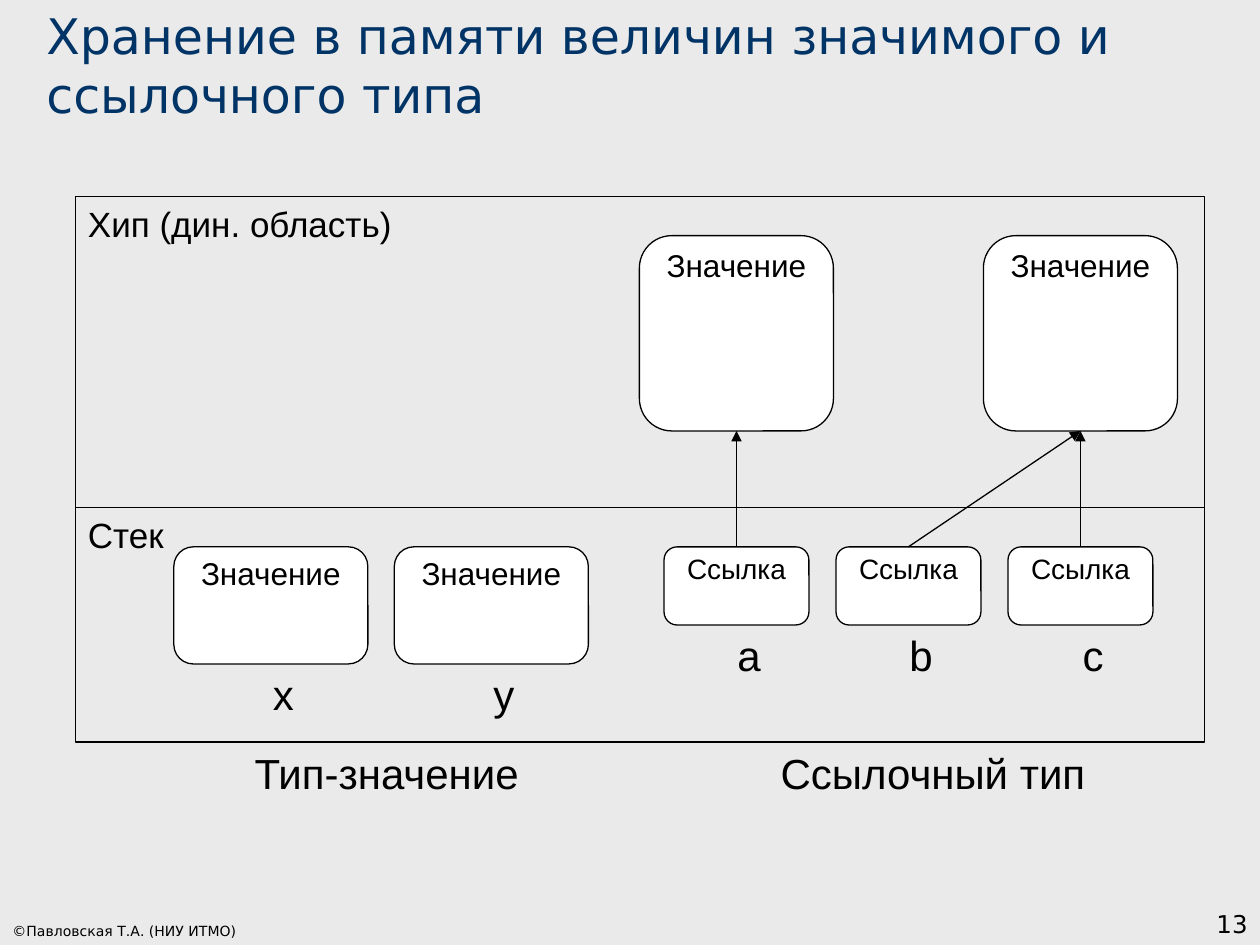
from dataclasses import dataclass

from lxml import etree
from pptx import Presentation
from pptx.dml.color import RGBColor
from pptx.enum.shapes import MSO_CONNECTOR, MSO_SHAPE
from pptx.enum.text import MSO_ANCHOR, PP_ALIGN
from pptx.oxml.ns import qn
from pptx.util import Inches, Pt

RECTANGLE, ROUNDED = MSO_SHAPE.RECTANGLE, MSO_SHAPE.ROUNDED_RECTANGLE
STRAIGHT = MSO_CONNECTOR.STRAIGHT
TOP, BOTTOM = MSO_ANCHOR.TOP, MSO_ANCHOR.BOTTOM
LEFT, CENTER, RIGHT = PP_ALIGN.LEFT, PP_ALIGN.CENTER, PP_ALIGN.RIGHT

COLORS = {"background": "EAEAEA", "title": "003366", "ink": "000000", "box": "FFFFFF"}
DIAGRAM_FONT, FRAME_FONT = "Arial", "DejaVu Sans"
LINE_WIDTH = Pt(0.75)

STACK_TOP, STACK_BOTTOM = 4.03, 5.89
CELL_TOP = 4.34
VALUE_WIDTH, VALUE_HEIGHT = 1.54, 0.93
REFERENCE_WIDTH, REFERENCE_HEIGHT = 1.15, 0.62
REFERENCE_LEFT, REFERENCE_STEP = 5.27, 1.365
HEAP_TOP, HEAP_HEIGHT = 1.87, 1.55
LABEL_WIDTH, LABEL_HEIGHT = 0.57, 0.62
LABEL_SHIFT = 0.1  # labels sit slightly right of the middle of their cell


@dataclass
class Box:
    text: str
    left: float
    top: float
    width: float
    height: float
    size: float


@dataclass
class Reference:
    name: str
    column: int
    target_column: int


def color(name: str) -> RGBColor:
    return RGBColor.from_string(COLORS[name])


def add_text(frame, box: Box, font_name: str, color_name: str, alignment, anchor) -> None:
    frame.word_wrap = True
    frame.vertical_anchor = anchor
    paragraph = frame.paragraphs[0]
    paragraph.alignment = alignment
    run = paragraph.add_run()
    run.text = box.text
    run.font.name = font_name
    run.font.size = Pt(box.size)
    run.font.color.rgb = color(color_name)


def add_frame_text(slide, box: Box, alignment=LEFT, color_name: str = "ink") -> None:
    """Add a text of the slide's frame: title, footer or number."""
    shape = slide.shapes.add_textbox(
        Inches(box.left), Inches(box.top), Inches(box.width), Inches(box.height))
    add_text(shape.text_frame, box, FRAME_FONT, color_name, alignment, BOTTOM)


def add_box(slide, box: Box, kind, filled: bool, outlined: bool):
    shape = slide.shapes.add_shape(
        kind, Inches(box.left), Inches(box.top), Inches(box.width), Inches(box.height))
    shape.shadow.inherit = False
    if filled:
        shape.fill.solid()
        shape.fill.fore_color.rgb = color("box")
    else:
        shape.fill.background()
    if outlined:
        shape.line.color.rgb = color("ink")
        shape.line.width = LINE_WIDTH
    else:
        shape.line.fill.background()
    return shape


def add_area(slide, box: Box) -> None:
    shape = add_box(slide, box, RECTANGLE, filled=False, outlined=True)
    add_text(shape.text_frame, box, DIAGRAM_FONT, "ink", LEFT, TOP)


def add_rounded(slide, box: Box, visible: bool) -> None:
    shape = add_box(slide, box, ROUNDED, filled=visible, outlined=visible)
    shape.adjustments[0] = 0.167
    frame = shape.text_frame
    frame.margin_left = frame.margin_right = Inches(0.02)
    frame.margin_top = frame.margin_bottom = Inches(0.01)
    add_text(frame, box, DIAGRAM_FONT, "ink", CENTER, TOP)


def add_name(slide, name: str, cell: Box) -> None:
    """Put a variable's name under its cell."""
    left = cell.left + (cell.width - LABEL_WIDTH) / 2 + LABEL_SHIFT
    label = Box(name, left, cell.top + cell.height, LABEL_WIDTH, LABEL_HEIGHT, 24)
    add_rounded(slide, label, visible=False)


def add_arrow(slide, start_x: float, end_x: float) -> None:
    """Point from a stack cell up to an object in the heap."""
    connector = slide.shapes.add_connector(
        STRAIGHT, Inches(start_x), Inches(CELL_TOP),
        Inches(end_x), Inches(HEAP_TOP + HEAP_HEIGHT))
    connector.line.color.rgb = color("ink")
    connector.line.width = LINE_WIDTH
    line = connector.line._get_or_add_ln()
    etree.SubElement(line, qn("a:tailEnd"), type="triangle")
    etree.SubElement(connector._element.spPr, qn("a:effectLst"))


def reference_center(column: int) -> float:
    return REFERENCE_LEFT + column * REFERENCE_STEP + REFERENCE_WIDTH / 2


def main() -> None:
    presentation = Presentation()
    presentation.slide_width, presentation.slide_height = Inches(10), Inches(7.5)
    slide = presentation.slides.add_slide(presentation.slide_layouts[6])
    slide.background.fill.solid()
    slide.background.fill.fore_color.rgb = color("background")

    add_frame_text(slide, Box("©Павловская Т.А. (НИУ ИТМО)", 0, 7.22, 3.11, 0.28, 8))
    add_frame_text(slide, Box("13", 7.92, 7, 2.08, 0.5, 14), RIGHT)
    title = "Хранение в памяти величин значимого и ссылочного типа"
    add_frame_text(slide, Box(title, 0.27, 0, 8.93, 1.03, 28), color_name="title")

    add_area(slide, Box("Хип (дин. область)", 0.6, 1.56, 8.96, STACK_TOP - 1.56, 20))
    add_area(slide, Box("Стек", 0.6, STACK_TOP, 8.96, STACK_BOTTOM - STACK_TOP, 20))

    for text, left, width in (("Тип-значение", 1.85, 2.44), ("Ссылочный тип", 5.79, 3.23)):
        add_rounded(slide, Box(text, left, STACK_BOTTOM, width, 0.62, 24), visible=False)

    for name, left in (("x", 1.38), ("y", 3.13)):
        cell = Box("Значение", left, CELL_TOP, VALUE_WIDTH, VALUE_HEIGHT, 18)
        add_rounded(slide, cell, visible=True)
        add_name(slide, name, cell)

    references = (Reference("а", 0, 0), Reference("b", 1, 2), Reference("c", 2, 2))
    for column in sorted({reference.target_column for reference in references}):
        left = reference_center(column) - VALUE_WIDTH / 2
        heap_object = Box("Значение", left, HEAP_TOP, VALUE_WIDTH, HEAP_HEIGHT, 18)
        add_rounded(slide, heap_object, visible=True)

    for reference in references:
        center = reference_center(reference.column)
        cell = Box("Ссылка", center - REFERENCE_WIDTH / 2, CELL_TOP,
                   REFERENCE_WIDTH, REFERENCE_HEIGHT, 16)
        add_rounded(slide, cell, visible=True)
        add_name(slide, reference.name, cell)
        add_arrow(slide, center, reference_center(reference.target_column))

    presentation.save("out.pptx")


if __name__ == "__main__":
    main()
